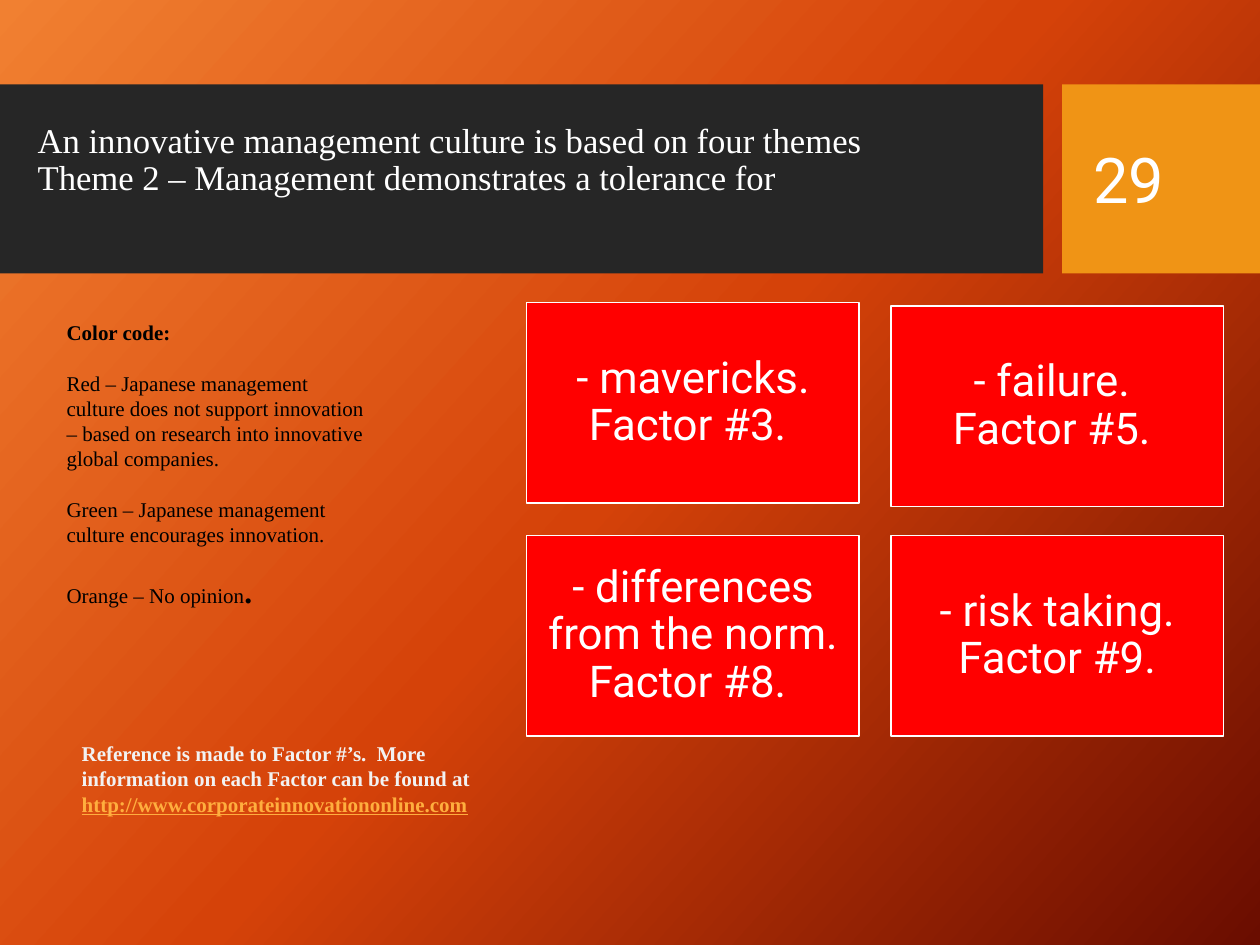
from pptx import Presentation
from pptx import util as u
from pptx.dml.color import RGBColor
from pptx.enum import shapes, text
from pptx.oxml import parse_xml
from pptx.oxml.ns import nsdecls

WHITE = RGBColor(0xFF, 0xFF, 0xFF)
OFF_WHITE = RGBColor(0xF2, 0xF2, 0xF2)
BLACK = RGBColor(0, 0, 0)
CHARCOAL = RGBColor(0x26, 0x26, 0x26)
AMBER = RGBColor(0xF0, 0x94, 0x15)
LINK = RGBColor(0xFF, 0xAE, 0x3E)
RED = RGBColor(0xFF, 0, 0)
GRADIENT = {0: "F18031", 50: "D54209", 100: "6A0D00"}
SERIF, SANS = "Times New Roman", "Roboto"
MIDDLE, TOP = text.MSO_ANCHOR.MIDDLE, text.MSO_ANCHOR.TOP


class Deck:
    """Holds the presentation, its current slide and the shared style."""

    def __init__(self, width, height):
        self.prs = Presentation()
        self.prs.slide_width, self.prs.slide_height = u.Inches(width), u.Inches(height)
        self.s = self.prs.slides.add_slide(self.prs.slide_layouts[6])

    def background(self, stops, angle):
        gs = "".join(
            f'<a:gs pos="{pos * 1000}"><a:srgbClr val="{color}"/></a:gs>'
            for pos, color in stops.items()
        )
        bg = parse_xml(
            f'<p:bg {nsdecls("p", "a")}><p:bgPr><a:gradFill rotWithShape="1">'
            f'<a:gsLst>{gs}</a:gsLst><a:lin ang="{angle * 60000}" scaled="0"/>'
            "</a:gradFill><a:effectLst/></p:bgPr></p:bg>"
        )
        self.s._element.cSld.insert(0, bg)

    def rect(self, box, fill, line=None):
        sp = self.s.shapes.add_shape(
            shapes.MSO_SHAPE.RECTANGLE, *map(u.Inches, box))
        sp.shadow.inherit = False
        sp.fill.solid()
        sp.fill.fore_color.rgb = fill
        if line is None:
            sp.line.fill.background()
        else:
            sp.line.color.rgb = line
            sp.line.width = u.Pt(1)
        return sp

    def set_text(self, sp, paragraphs, anchor=TOP, gap=0, font=None, **style):
        """Fill a shape; a paragraph is a list of (text, font overrides) runs."""
        tf = sp.text_frame
        tf.word_wrap = True
        tf.vertical_anchor = anchor
        for i, runs in enumerate(paragraphs):
            p = tf.add_paragraph() if i else tf.paragraphs[0]
            for name, value in style.items():
                setattr(p, name, value)
            if i and gap:
                p.space_before = u.Pt(gap)
            for words, overrides in runs:
                values = {**(font or {}), **overrides}
                color = values.pop("color")
                for j, part in enumerate(words.split("\v")):
                    if j:
                        p.add_line_break()
                    r = p.add_run()
                    r.text = part
                    r.font.color.rgb = color
                    for name, value in values.items():
                        setattr(r.font, name, value)
        return tf

    def label(self, box, paragraphs, **style):
        sp = self.s.shapes.add_textbox(*map(u.Inches, box))
        return self.set_text(sp, paragraphs, **style)

    def card(self, box, words):
        tf = self.set_text(
            self.rect(box, RED, WHITE), [[(words, {})]], MIDDLE,
            font={"name": SANS, "size": u.Pt(25), "color": WHITE},
            alignment=text.PP_ALIGN.CENTER, line_spacing=0.9)
        for side in ("left", "right", "top", "bottom"):
            setattr(tf, f"margin_{side}", u.Inches(0.1))


def main():
    deck = Deck(10, 7.5)
    deck.background(GRADIENT, 42)
    deck.rect((0, 0.67, 8.28, 1.5), CHARCOAL)
    deck.rect((8.43, 0.67, 1.57, 1.5), AMBER)

    deck.label(
        (0.2, 0.93, 7.32, 1.25),
        [[("An innovative management culture is based on four themes\v"
           "Theme 2 – Management demonstrates a tolerance for", {})]],
        font={"name": SERIF, "size": u.Pt(19.8), "color": WHITE}, line_spacing=0.9)
    deck.label(
        (8.58, 0.82, 1.27, 1.19), [[("29", {})]], anchor=MIDDLE,
        font={"name": SANS, "size": u.Pt(36), "color": WHITE})

    cards = [
        (4.18, 2.4, "- mavericks. Factor #3. "),
        (7.07, 2.43, "- failure. \vFactor #5. "),
        (4.18, 4.25, "- differences from the norm. Factor #8. "),
        (7.07, 4.25, "- risk taking. Factor #9."),
    ]
    for left, top, words in cards:
        deck.card((left, top, 2.64, 1.59), words)

    body = {"name": SERIF, "size": u.Pt(12)}
    deck.label(
        (0.55, 5.83, 3.31, 0.71),
        [[("Reference is made to Factor #’s.  More information on each Factor "
           "can be found at", {})],
         [("http://www.corporateinnovationonline.com",
           {"color": LINK, "underline": True})]],
        font={**body, "bold": True, "color": OFF_WHITE})
    deck.label(
        (0.43, 2.49, 2.59, 2.42),
        [[("Color code:", {"bold": True})],
         [("Red – Japanese management culture does not support innovation "
           "– based on research into innovative global companies.", {})],
         [("Green – Japanese management culture encourages innovation.", {})],
         [("Orange – No opinion", {}), (".", {"size": u.Pt(18), "bold": True})]],
        gap=14.4, font={**body, "color": BLACK})

    deck.prs.save("out.pptx")


if __name__ == "__main__":
    main()
